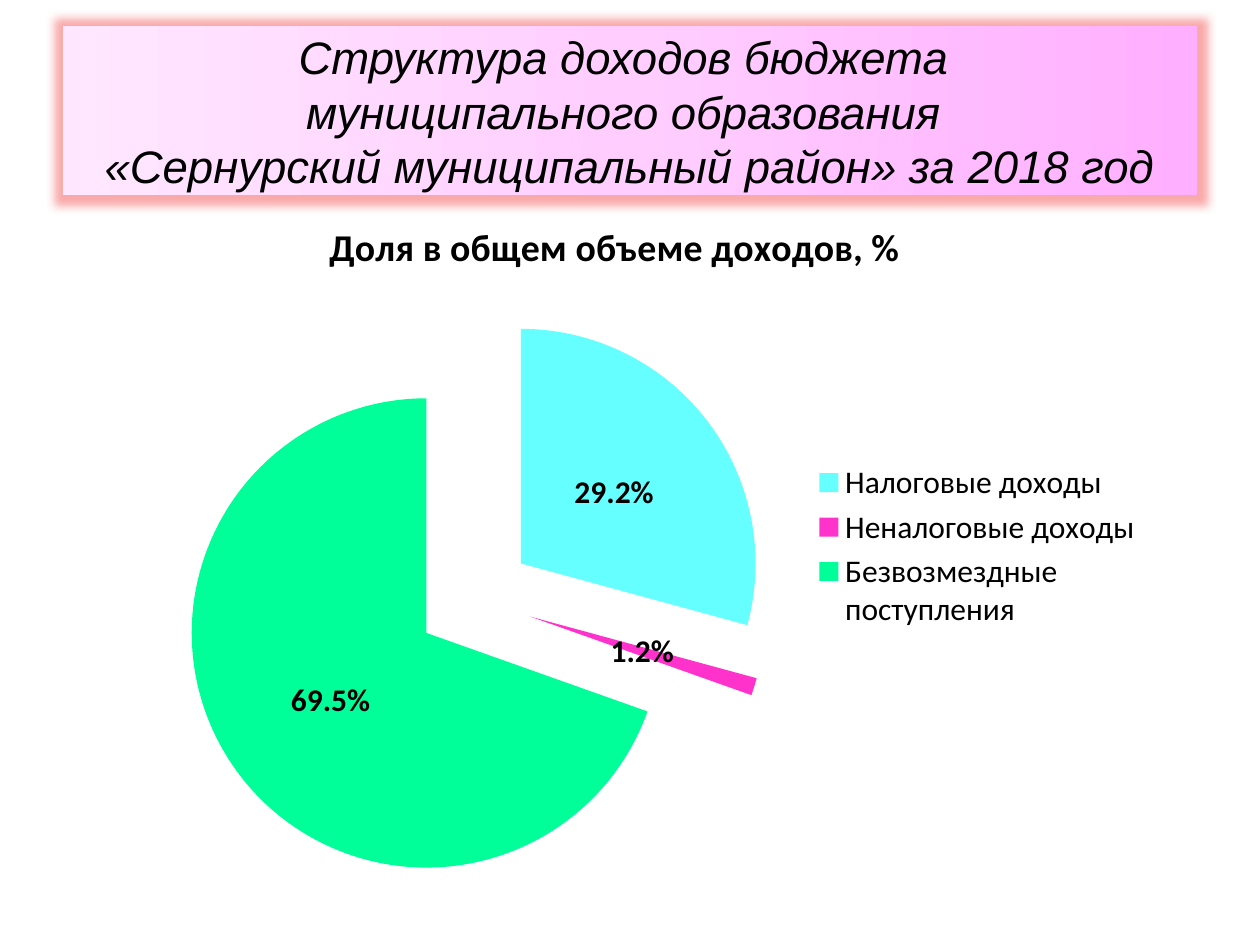
from dataclasses import dataclass

from pptx import Presentation
from pptx.chart.data import CategoryChartData
from pptx.dml.color import RGBColor
from pptx.enum.chart import XL_CHART_TYPE as ChartType
from pptx.enum.chart import XL_LABEL_POSITION as LabelPosition
from pptx.enum.chart import XL_LEGEND_POSITION as LegendPosition
from pptx.enum.text import MSO_ANCHOR, MSO_AUTO_SIZE, PP_ALIGN
from pptx.oxml import parse_xml
from pptx.oxml.ns import nsdecls
from pptx.util import Inches, Pt


@dataclass(frozen=True)
class Theme:
    text: str = "000000"
    glow: str = "F02828"
    banner: tuple = ((0, "FFAFFF"), (50, "FFCEFF"), (100, "FFE7FF"))
    title_font: str = "Arial"
    chart_font: str = "Calibri"
    title_size: float = 26
    chart_title_size: float = 21.6
    chart_size: float = 18


theme = Theme()
black = RGBColor.from_string(theme.text)


def drawing_xml(tag, body, attributes=""):
    return parse_xml(f"<a:{tag} {nsdecls('a')} {attributes}>{body}</a:{tag}>")


deck = Presentation()
deck.slide_width, deck.slide_height = Inches(10), Inches(7.5)
page = deck.slides.add_slide(deck.slide_layouts[5])

# Title banner: gradient fill with a soft glow
banner = page.shapes.title
banner.left, banner.top = Inches(0.5), Inches(0.21)
banner.width, banner.height = Inches(9), Inches(1.34)
stops = "".join(
    f'<a:gs pos="{position * 1000}"><a:srgbClr val="{color}"/></a:gs>'
    for position, color in theme.banner
)
properties = banner.element.spPr
properties.append(drawing_xml(
    "gradFill", f'<a:gsLst>{stops}</a:gsLst><a:lin ang="10800000" scaled="0"/>'))
properties.append(drawing_xml(
    "effectLst",
    f'<a:glow rad="{Pt(11)}"><a:srgbClr val="{theme.glow}">'
    '<a:alpha val="40000"/></a:srgbClr></a:glow>'))

frame = banner.text_frame
frame.word_wrap = False
frame.auto_size = MSO_AUTO_SIZE.NONE
frame.vertical_anchor = MSO_ANCHOR.MIDDLE
title_lines = (
    "Структура доходов бюджета ",
    "муниципального образования ",
    "«Сернурский муниципальный район» за 2018 год",
)
for index, line in enumerate(title_lines):
    para = frame.add_paragraph() if index else frame.paragraphs[0]
    para.alignment = PP_ALIGN.CENTER
    span = para.add_run()
    span.text = line
    span.font.name = theme.title_font
    span.font.size = Pt(theme.title_size)
    span.font.italic = True
    span.font.color.rgb = black
    outline = drawing_xml(
        "ln", f'<a:solidFill><a:srgbClr val="{theme.text}"/></a:solidFill>',
        f'w="{Pt(0.75)}"')
    span.font._element.insert(0, outline)

# Exploded pie of income shares
slices = (
    ("Налоговые доходы", 0.292, "66FFFF"),
    ("Неналоговые доходы", 0.012, "FF33CC"),
    ("Безвозмездные поступления", 0.695, "00FF99"),
)
chart_title = "Доля в общем объеме доходов, %"
data = CategoryChartData(number_format="0.0%")
data.categories = [name for name, share, color in slices]
data.add_series(chart_title, [share for name, share, color in slices])
chart = page.shapes.add_chart(
    ChartType.PIE, Inches(0.59), Inches(1.53), Inches(8.58), Inches(5.61), data
).chart
chart.font.name = theme.chart_font
chart.font.size = Pt(theme.chart_size)
chart.font.color.rgb = black

chart.has_title = True
span = chart.chart_title.text_frame.paragraphs[0].add_run()
span.text = chart_title
span.font.name = theme.chart_font
span.font.size = Pt(theme.chart_title_size)
span.font.bold = True
span.font.color.rgb = black

chart.has_legend = True
chart.legend.position = LegendPosition.RIGHT
chart.legend.include_in_layout = False

plot = chart.plots[0]
plot.vary_by_categories = True
plot.has_data_labels = True
labels = plot.data_labels
labels.show_value = True
labels.show_percentage = False
labels.number_format = "0.0%"
labels.number_format_is_linked = False
labels.position = LabelPosition.CENTER
labels.font.name = theme.chart_font
labels.font.size = Pt(theme.chart_size)
labels.font.bold = True
labels.font.color.rgb = black

series = plot.series[0]
for index, (name, share, color) in enumerate(slices):
    fill = series.points[index].format.fill
    fill.solid()
    fill.fore_color.rgb = RGBColor.from_string(color)
first_point = series._element.find(
    "{http://schemas.openxmlformats.org/drawingml/2006/chart}dPt")
first_point.addprevious(parse_xml(f'<c:explosion {nsdecls("c")} val="25"/>'))

plot_area = chart._chartSpace.chart.plotArea
for old_layout in plot_area.xpath("c:layout"):
    plot_area.remove(old_layout)
bounds = "".join(
    f'<c:{side} val="{value}"/>'
    for side, value in (("x", 0.06), ("y", 0.16), ("w", 0.62), ("h", 0.83))
)
plot_area.insert(0, parse_xml(
    f'<c:layout {nsdecls("c")}><c:manualLayout><c:layoutTarget val="inner"/>'
    f'<c:xMode val="edge"/><c:yMode val="edge"/>{bounds}'
    "</c:manualLayout></c:layout>"))

deck.save("out.pptx")
